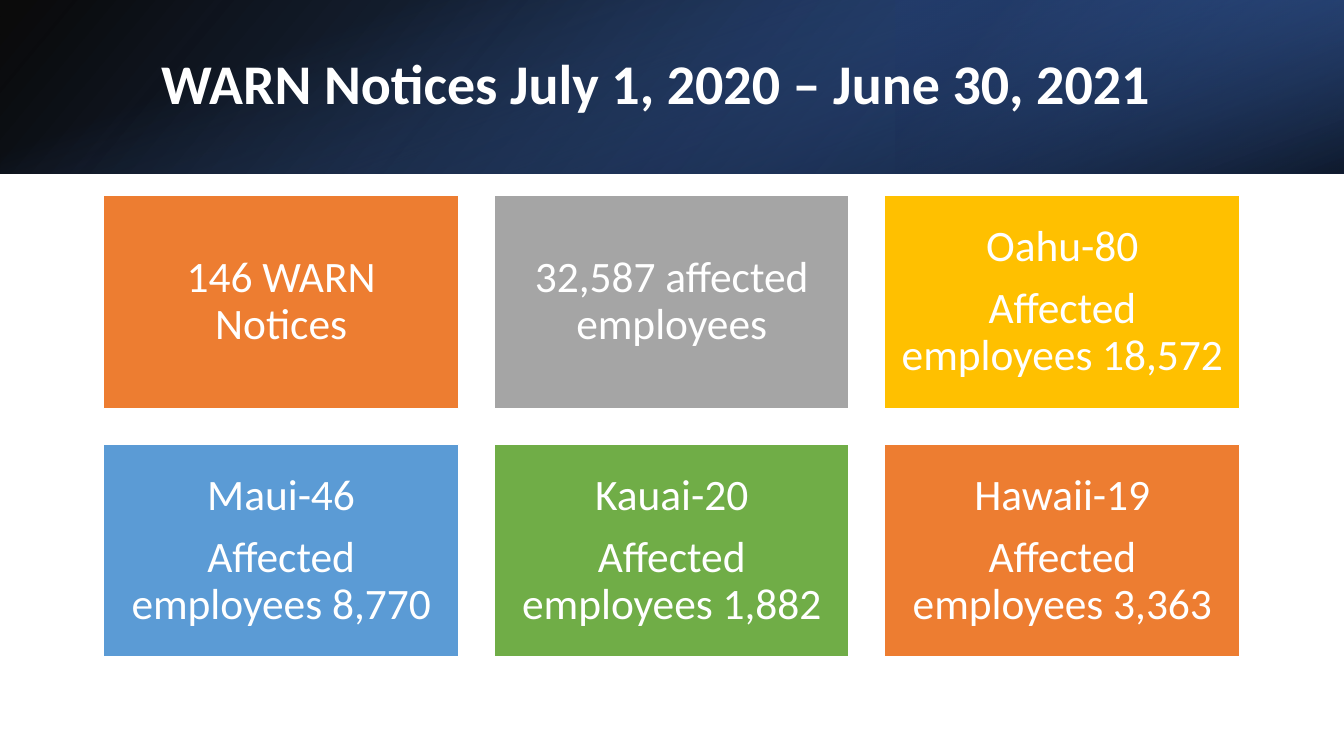
import lxml.etree
import pptx
import pptx.dml.color
import pptx.enum.shapes
import pptx.enum.text
import pptx.oxml.ns
import pptx.util

Pt = pptx.util.Pt
WIDTH, HEIGHT, BAND = 960, 540, 124
FONT = "Calibri"
COLORS = {
    "white": "FFFFFF",
    "black": "000000",
    "navy": "203864",
    "deep_blue": "2F5597",
    "royal": "4472C4",
    "orange": "ED7D31",
    "gray": "A5A5A5",
    "gold": "FFC000",
    "blue": "5B9BD5",
    "green": "70AD47",
}
CARDS = [
    ("orange", ["146 WARN Notices"]),
    ("gray", ["32,587 affected employees"]),
    ("gold", ["Oahu-80", "Affected employees 18,572"]),
    ("blue", ["Maui-46", "Affected employees 8,770"]),
    ("green", ["Kauai-20", "Affected employees 1,882"]),
    ("orange", ["Hawaii-19", "Affected employees 3,363"]),
]


def rgb(name):
    return pptx.dml.color.RGBColor.from_string(COLORS[name])


def add_rect(s, x, y, w, h):
    rect = pptx.enum.shapes.MSO_SHAPE.RECTANGLE
    sp = s.shapes.add_shape(rect, Pt(x), Pt(y), Pt(w), Pt(h))
    sp.shadow.inherit = False
    return sp


def add_gradient_rect(s, box, stops, angle, rotation=0, flip=False):
    sp = add_rect(s, *box)
    sp.rotation = rotation
    sp.line.fill.background()
    sp.fill.gradient()
    sp.fill.gradient_angle = 360 - angle
    for stop, (position, color, _) in zip(sp.fill.gradient_stops, stops):
        stop.position = position / 100
        stop.color.rgb = rgb(color)
    spPr = sp._element.spPr
    for clr, (_, _, opacity) in zip(spPr.xpath(".//a:gs/a:srgbClr"), stops):
        alpha = lxml.etree.SubElement(clr, pptx.oxml.ns.qn("a:alpha"))
        alpha.set("val", str(opacity * 1000))
    if flip:
        spPr.find(pptx.oxml.ns.qn("a:xfrm")).set("flipH", "1")


def write_text(sp, lines, size, align, bold=False, space_after=0):
    tf = sp.text_frame
    tf.word_wrap = True
    tf.vertical_anchor = pptx.enum.text.MSO_ANCHOR.MIDDLE
    tf.text = "\n".join(lines)
    for p in tf.paragraphs:
        p.alignment = align
        p.line_spacing = 0.9
        p.space_after = Pt(space_after)
        for r in p.runs:
            r.font.name = FONT
            r.font.size = Pt(size)
            r.font.bold = bold
            r.font.color.rgb = rgb("white")


def add_title(s, text):
    sp = s.shapes.add_textbox(Pt(108), Pt(27.4), Pt(790.6), Pt(69))
    write_text(sp, [text], 40, pptx.enum.text.PP_ALIGN.LEFT, bold=True)


def add_card(s, x, y, color, lines):
    sp = add_rect(s, x, y, 253.6, 152.1)
    sp.fill.solid()
    sp.fill.fore_color.rgb = rgb(color)
    sp.line.color.rgb = rgb("white")
    sp.line.width = Pt(1)
    tf = sp.text_frame
    tf.margin_left = tf.margin_right = Pt(9.3)
    tf.margin_top = tf.margin_bottom = Pt(9.3)
    write_text(sp, lines, 31, pptx.enum.text.PP_ALIGN.CENTER, space_after=10.85)


def main():
    prs = pptx.Presentation()
    prs.slide_width, prs.slide_height = Pt(WIDTH), Pt(HEIGHT)
    s = prs.slides.add_slide(prs.slide_layouts[6])

    add_gradient_rect(s, (0, 0, WIDTH, BAND),
                      [(0, "black", 96), (100, "deep_blue", 100)], 140, flip=True)
    add_gradient_rect(s, (WIDTH * 2 / 3, 0, WIDTH / 3, BAND),
                      [(19, "navy", 68), (100, "royal", 79)], 320, 180, flip=True)
    offset = (WIDTH - BAND) / 2
    add_gradient_rect(s, (offset, -offset, BAND, WIDTH),
                      [(23, "royal", 0), (99, "black", 74)], 340, 90)

    add_title(s, "WARN Notices July 1, 2020 – June 30, 2021")
    for i, (color, lines) in enumerate(CARDS):
        row, col = divmod(i, 3)
        add_card(s, 74 + col * 279, 139.8 + row * 177.5, color, lines)

    prs.save("out.pptx")


if __name__ == "__main__":
    main()
